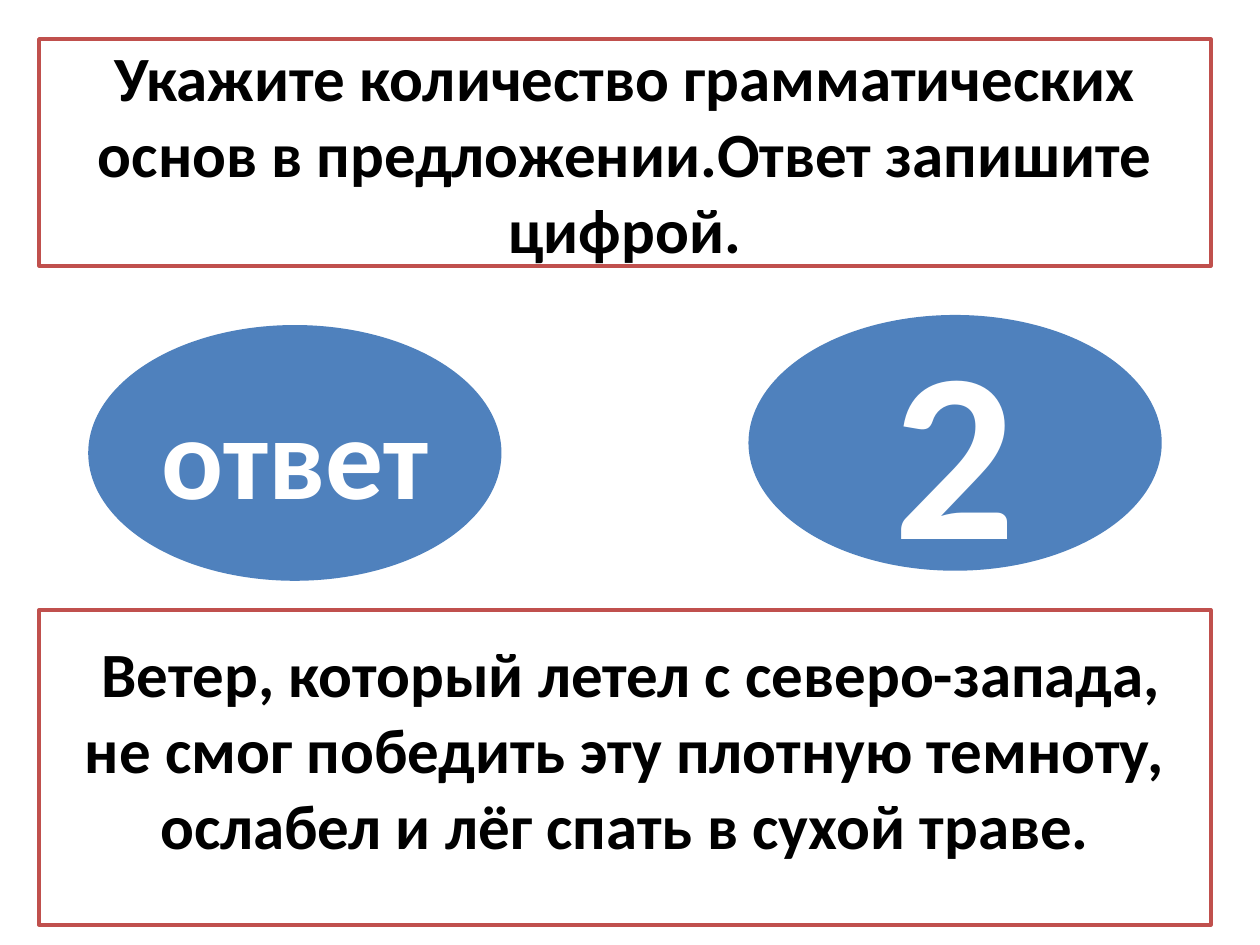
"""Build a Russian grammar quiz slide: task, answer ovals and sentence."""
from pptx import Presentation
from pptx.dml.color import RGBColor
from pptx.enum.shapes import MSO_SHAPE
from pptx.enum.text import MSO_ANCHOR, PP_ALIGN
from pptx.util import Inches, Pt

RECT, OVAL = MSO_SHAPE.RECTANGLE, MSO_SHAPE.OVAL
MIDDLE, CENTER = MSO_ANCHOR.MIDDLE, PP_ALIGN.CENTER
COLORS = {"white": "FFFFFF", "black": "000000", "blue": "4F81BD", "red": "C0504D"}
STYLES = {
    RECT: {"fill": "white", "text": "black", "line": "red"},
    OVAL: {"fill": "blue", "text": "white", "line": None},
}

TASK = "Укажите количество грамматических основ в предложении.Ответ запишите цифрой."
QUOTE = ("Ветер, который летел с северо-запада, не смог победить эту плотную темноту, "
         "ослабел и лёг спать в сухой траве.")

ITEMS = [
    (RECT, (0.31, 0.31, 9.3, 1.8), TASK, 36, 0.05, 0),
    (OVAL, (0.7, 2.58, 3.28, 2.03), "ответ", 66, 0.05, 0),
    (OVAL, (5.94, 2.5, 3.28, 2.03), "2", 138, 0.05, 0),
    (RECT, (0.31, 4.84, 9.3, 2.5), QUOTE, 36, 0.35, 0.1),
]


def color(name):
    return RGBColor.from_string(COLORS[name])


prs = Presentation()
prs.slide_width, prs.slide_height = Inches(10), Inches(7.5)
slide = prs.slides.add_slide(prs.slide_layouts[6])

for kind, place, text, size, bottom, indent in ITEMS:
    style = STYLES[kind]
    shape = slide.shapes.add_shape(kind, *map(Inches, place))
    shape.shadow.inherit = False
    shape.fill.solid()
    shape.fill.fore_color.rgb = color(style["fill"])
    if style["line"]:
        shape.line.color.rgb = color(style["line"])
        shape.line.width = Pt(2)
    else:
        shape.line.fill.background()

    frame = shape.text_frame
    frame.word_wrap = True
    frame.vertical_anchor = MIDDLE
    frame.margin_bottom = Inches(bottom)
    para = frame.paragraphs[0]
    para.alignment = CENTER
    if indent:
        para._p.get_or_add_pPr().set("indent", str(Inches(indent)))
    run = para.add_run()
    run.text = text
    for key, value in {"name": "Calibri", "size": Pt(size), "bold": True}.items():
        setattr(run.font, key, value)
    run.font.color.rgb = color(style["text"])

prs.save("out.pptx")
